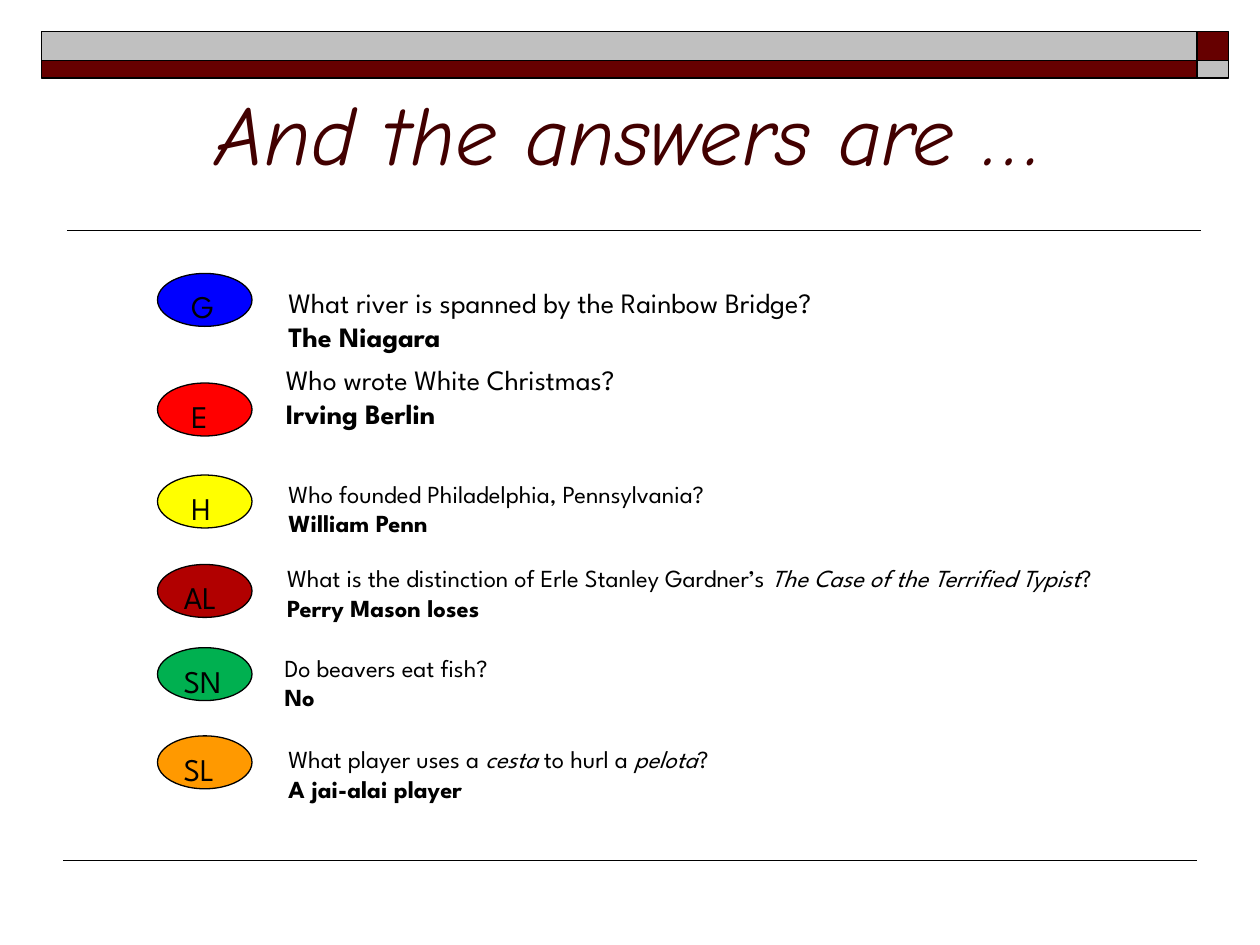
import pptx
import pptx.dml.color
import pptx.enum.shapes
import pptx.enum.text
import pptx.oxml
import pptx.oxml.ns
import pptx.util
from pptx.util import Inches

SHAPES = pptx.enum.shapes.MSO_SHAPE
ANCHOR = pptx.enum.text.MSO_ANCHOR
BLACK, MAROON, SILVER = "000000", "660000", "C0C0C0"
BODY_FONT = "League Spartan"

# letter, oval colour, oval top, text left, text top, text width, size,
# question as (text, italic) spans, answer
ROWS = [
    ("G", "0000FF", 2.17, 2.19, 2.22, 6.17, 16,
     [("What river is spanned by the Rainbow Bridge?", False)], "The Niagara"),
    ("E", "FF0000", 3.04, 2.17, 2.83, 6.83, 16,
     [("Who wrote White Christmas?", False)], "Irving Berlin"),
    ("H", "FFFF00", 3.77, 2.19, 3.75, 7.41, 14,
     [("Who founded Philadelphia, Pennsylvania?", False)], "William Penn"),
    ("AL", "B10000", 4.48, 2.18, 4.42, 7.08, 14,
     [("What is the distinction of Erle Stanley Gardner’s ", False),
      ("The Case of the Terrified Typist", True), ("?", False)],
     "Perry Mason loses"),
    ("SN", "00B050", 5.14, 2.16, 5.13, 6.75, 14,
     [("Do beavers eat fish?", False)], "No"),
    ("SL", "FF9900", 5.84, 2.19, 5.86, 7.17, 14,
     [("What player uses a ", False), ("cesta", True), (" to hurl a ", False),
      ("pelota", True), ("?", False)], "A jai-alai player"),
]


def color(value):
    return pptx.dml.color.RGBColor.from_string(value)


def add_span(para, text, size, font=BODY_FONT, fill=BLACK, **styles):
    span = para.add_run()
    span.text = text
    formats = {"name": font, "size": pptx.util.Pt(size), **styles}
    for name, value in formats.items():
        setattr(span.font, name, value)
    span.font.color.rgb = color(fill)


def add_filled(page, kind, left, top, width, height, fill, weight):
    shape = page.shapes.add_shape(
        kind, Inches(left), Inches(top), Inches(width), Inches(height))
    shape.shadow.inherit = False
    shape.fill.solid()
    shape.fill.fore_color.rgb = color(fill)
    shape.line.color.rgb = color(BLACK)
    shape.line.width = pptx.util.Pt(weight)
    return shape


def add_rule(page, left, right, y, weight):
    rule = page.shapes.add_connector(
        pptx.enum.shapes.MSO_CONNECTOR.STRAIGHT,
        Inches(left), Inches(y), Inches(right), Inches(y))
    rule.line.color.rgb = color(BLACK)
    rule.line.width = pptx.util.Pt(weight)
    properties = rule._element.spPr
    properties.append(pptx.oxml.parse_xml(
        f"<a:effectLst {pptx.oxml.ns.nsdecls('a')}/>"))


def add_text_box(page, left, top, width, height, anchor=ANCHOR.TOP):
    box = page.shapes.add_textbox(
        Inches(left), Inches(top), Inches(width), Inches(height))
    box.text_frame.word_wrap = True
    box.text_frame.vertical_anchor = anchor
    return box.text_frame


def add_banner(page):
    """Two bars across the top, with colours swapped in the right-hand end."""
    columns = [(0.33, 9.17), (9.5, 0.25)]
    bars = [(0.25, 0.23, (SILVER, MAROON)), (0.48, 0.14, (MAROON, SILVER))]
    for top, height, fills in bars:
        for (left, width), fill in zip(columns, fills):
            add_filled(page, SHAPES.RECTANGLE, left, top, width, height, fill, 1)


def add_title(page, text):
    frame = add_text_box(page, 0.5, 0.25, 9, 1.25, ANCHOR.BOTTOM)
    para = frame.paragraphs[0]
    para.alignment = pptx.enum.text.PP_ALIGN.CENTER
    add_span(para, text, 48, "Comic Neue", "420000", italic=True)


def add_category(page, letter, fill, top):
    oval = add_filled(page, SHAPES.OVAL, 1.25, top, 0.75, 0.42, fill, 0.75)
    frame = oval.text_frame
    frame.vertical_anchor = ANCHOR.TOP
    # Single letters sit a little further in than pairs.
    frame.margin_left = Inches(0.16 if len(letter) == 1 else 0.1)
    para = frame.paragraphs[0]
    para.alignment = pptx.enum.text.PP_ALIGN.LEFT
    add_span(para, letter, 18)


def add_answer(page, left, top, width, size, question, answer):
    height = 0.64 if size == 16 else 0.57
    frame = add_text_box(page, left, top, width, height)
    for text, italic in question:
        add_span(frame.paragraphs[0], text, size, italic=italic)
    add_span(frame.add_paragraph(), answer, size, bold=True)


def main():
    deck = pptx.Presentation()
    deck.slide_width, deck.slide_height = Inches(10), Inches(7.5)
    page = deck.slides.add_slide(deck.slide_layouts[6])
    add_rule(page, 0.53, 9.53, 1.83, 1)
    add_banner(page)
    add_rule(page, 0.5, 9.5, 6.83, 0.75)
    add_title(page, "And the answers are …")
    for letter, fill, oval_top, *answer in ROWS:
        add_category(page, letter, fill, oval_top)
        add_answer(page, *answer)
    deck.save("out.pptx")


if __name__ == "__main__":
    main()
